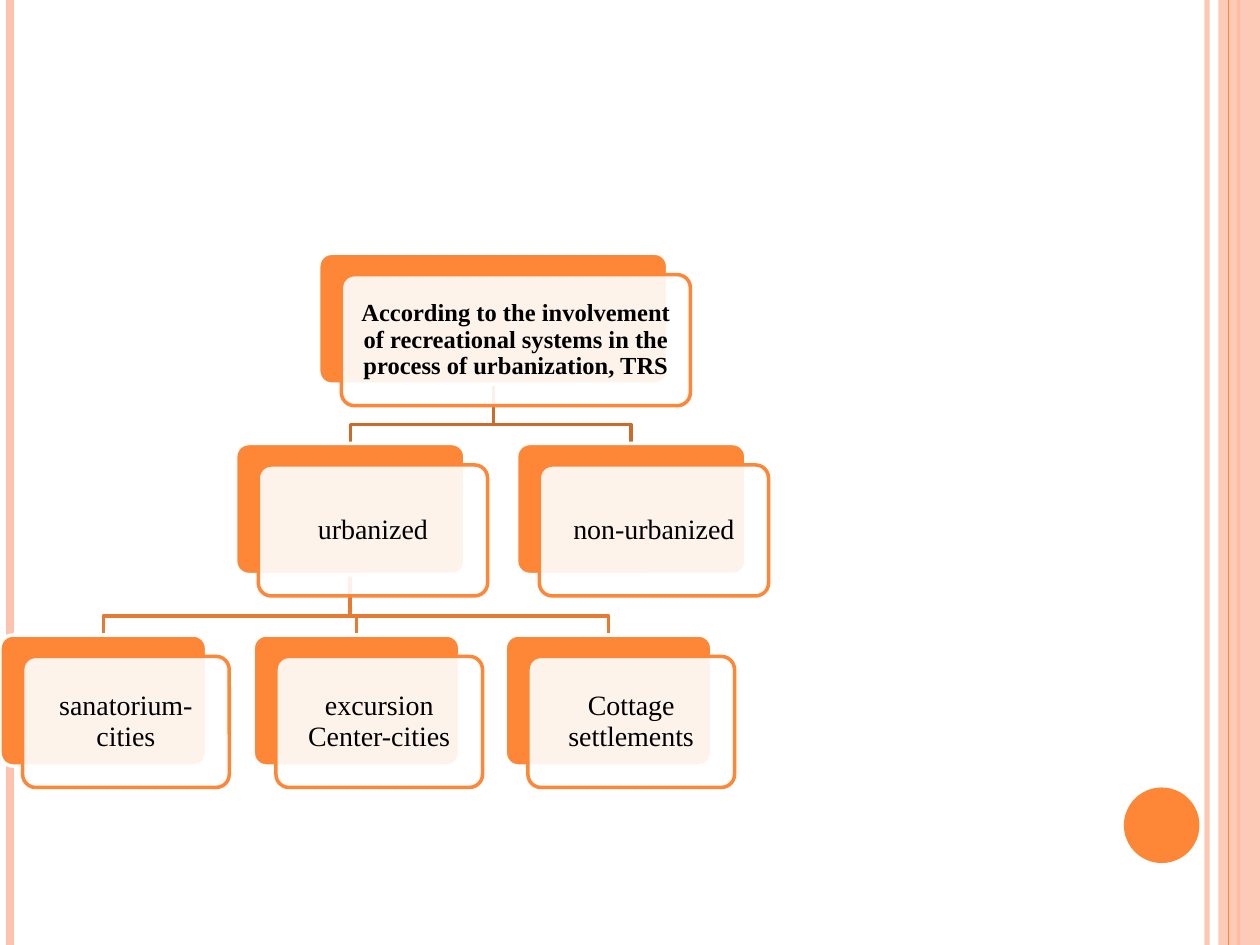
from lxml import etree
from pptx import Presentation
from pptx.dml.color import RGBColor
from pptx.enum.shapes import MSO_CONNECTOR, MSO_SHAPE
from pptx.enum.text import MSO_ANCHOR, PP_ALIGN
from pptx.oxml.ns import qn
from pptx.util import Inches, Pt

STRAIGHT = MSO_CONNECTOR.STRAIGHT
RECTANGLE, ROUNDED, OVAL = MSO_SHAPE.RECTANGLE, MSO_SHAPE.ROUNDED_RECTANGLE, MSO_SHAPE.OVAL
MIDDLE, CENTER = MSO_ANCHOR.MIDDLE, PP_ALIGN.CENTER

THEME = {
    "orange": RGBColor.from_string("FE8637"),
    "pink": RGBColor.from_string("FEC3AE"),
    "white": RGBColor.from_string("FFFFFF"),
    "text": RGBColor.from_string("000000"),
    "link_upper": RGBColor.from_string("CB6B2C"),
    "link_lower": RGBColor.from_string("E77A32"),
    "font": "Times New Roman",
    "outline": 2,
}

# Content: name -> (text, left, top, width, type size, bold, text inset)
BOXES = {
    "root": ("According to the involvement of recreational systems in the "
             "process of urbanization, TRS", 2.53, 2.01, 2.77, 14, True, 0.06),
    "urbanized": ("urbanized", 1.87, 3.52, 1.82, 16, False, 0.07),
    "sanatorium": ("sanatorium-cities", 0, 5.04, 1.64, 16, False, 0.07),
    "excursion": ("excursion Center-cities", 2.01, 5.04, 1.64, 16, False, 0.07),
    "cottage": ("Cottage settlements", 4.01, 5.04, 1.64, 16, False, 0.07),
    "non-urbanized": ("non-urbanized", 4.1, 3.52, 1.82, 16, False, 0.07),
}
LINKS = [
    ("root", "non-urbanized", "link_upper"),
    ("urbanized", "cottage", "link_lower"),
    ("urbanized", "excursion", "link_lower"),
    ("urbanized", "sanatorium", "link_lower"),
    ("root", "urbanized", "link_upper"),
]
# Vertical rules: x, colour, width, opacity
RULES_BEHIND = [(9.58, "pink", 3, 93), (0.08, "pink", 4.5, 100), (9.83, "orange", 1.5, 100)]
RULES_FRONT = [(9.75, "orange", 0.75, 100)]

PAGE_WIDTH, PAGE_HEIGHT = 10, 7.5
BOX_HEIGHT = 1.04
CARD_SHIFT_X, CARD_SHIFT_Y = 0.18, 0.17
BEND = 0.15  # distance from a link's bend to the child box


def set_opacity(properties, percent):
    if percent < 100:
        color = next(properties.iter(qn("a:srgbClr")))
        etree.SubElement(color, qn("a:alpha")).set("val", str(percent * 1000))


def add_rule(page, x, color, width, opacity):
    rule = page.shapes.add_connector(STRAIGHT, Inches(x), 0, Inches(x), Inches(PAGE_HEIGHT))
    rule.line.color.rgb = THEME[color]
    rule.line.width = Pt(width)
    properties = rule._element.spPr
    set_opacity(properties, opacity)
    etree.SubElement(properties, qn("a:effectLst"))


def add_block(page, kind, left, top, width, height, fill, outline=None, opacity=100):
    block = page.shapes.add_shape(kind, Inches(left), Inches(top), Inches(width), Inches(height))
    block.shadow.inherit = False
    block.fill.solid()
    block.fill.fore_color.rgb = THEME[fill]
    set_opacity(block._element.spPr, opacity)
    if outline:
        block.line.color.rgb = THEME[outline]
        block.line.width = Pt(THEME["outline"])
    else:
        block.line.fill.background()
    if kind == ROUNDED:
        block.adjustments[0] = 0.1
    return block


def add_link(page, parent, child, color):
    _, parent_left, parent_top, parent_width, *_ = BOXES[parent]
    _, child_left, child_top, child_width, *_ = BOXES[child]
    start_x = Inches(parent_left + parent_width / 2)
    start_y = Inches(parent_top + BOX_HEIGHT)
    end_x, end_y = Inches(child_left + child_width / 2), Inches(child_top)
    bend_y = Inches(child_top - BEND)
    builder = page.shapes.build_freeform(start_x, start_y)
    builder.add_line_segments([(start_x, bend_y), (end_x, bend_y), (end_x, end_y)], close=False)
    link = builder.convert_to_shape()
    link.shadow.inherit = False
    link.fill.background()
    link.line.color.rgb = THEME[color]
    link.line.width = Pt(THEME["outline"])


def add_box(page, text, left, top, width, size, bold, inset):
    add_block(page, ROUNDED, left, top, width, BOX_HEIGHT, "orange", "white")
    card = add_block(page, ROUNDED, left + CARD_SHIFT_X, top + CARD_SHIFT_Y, width, BOX_HEIGHT,
                     "white", "orange", 90)
    frame = card.text_frame
    frame.word_wrap = True
    frame.vertical_anchor = MIDDLE
    frame.margin_left = frame.margin_right = Inches(inset)
    frame.margin_top = frame.margin_bottom = Inches(inset)
    para = frame.paragraphs[0]
    para.text = text
    para.alignment = CENTER
    para.line_spacing = 0.9
    para.font.name = THEME["font"]
    para.font.size = Pt(size)
    para.font.bold = bold
    para.font.color.rgb = THEME["text"]


def main():
    deck = Presentation()
    deck.slide_width, deck.slide_height = Inches(PAGE_WIDTH), Inches(PAGE_HEIGHT)
    page = deck.slides.add_slide(deck.slide_layouts[6])

    # Page decoration
    for rule in RULES_BEHIND:
        add_rule(page, *rule)
    add_block(page, RECTANGLE, 9.67, 0, 0.33, PAGE_HEIGHT, "pink", opacity=87)
    for rule in RULES_FRONT:
        add_rule(page, *rule)
    add_block(page, OVAL, 8.92, 6.25, 0.6, 0.6, "orange")

    # Hierarchy: links behind, boxes in front
    for link in LINKS:
        add_link(page, *link)
    for box in BOXES.values():
        add_box(page, *box)

    deck.save("out.pptx")


if __name__ == "__main__":
    main()
